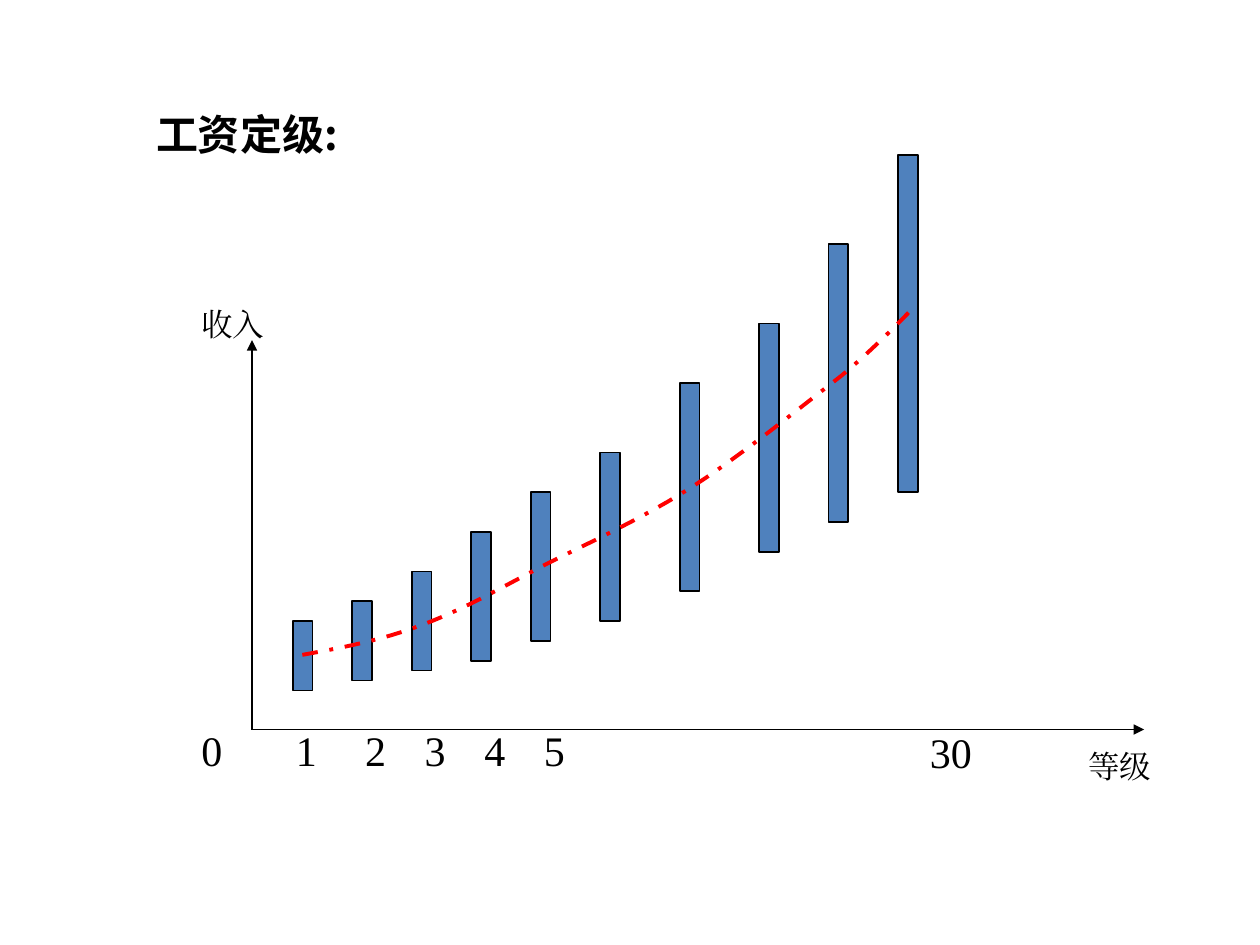
import pptx
import pptx.dml.color
import pptx.enum.dml
import pptx.enum.shapes
import pptx.enum.text
import pptx.oxml.ns
import pptx.util
from lxml import etree

Pt = pptx.util.Pt
qn = pptx.oxml.ns.qn
UNIT = 5.67
BARS = [(29.5, 62.6, 7), (35.5, 60.6, 8), (41.5, 57.6, 10), (47.5, 53.6, 13),
        (53.5, 49.6, 15), (60.5, 45.6, 17), (68.5, 38.6, 21), (76.5, 32.6, 23),
        (83.5, 24.6, 28), (90.5, 15.6, 34)]
TREND = [(172.8, 374.2), (195.8, 370.1), (218.2, 365.8), (241.2, 357.1),
         (264.2, 348.5), (284.4, 337), (310.3, 323.3), (336.2, 310.3),
         (367.9, 295.9), (396, 277.9), (424.1, 259.9), (459.4, 231.1),
         (481, 214.6), (501.8, 197.3), (522.7, 175), (522.7, 175)]


def tint(hue):
    """Turn a hex string into a colour."""
    return pptx.dml.color.RGBColor.from_string(hue)


def stroke(line, hue, width):
    """Set the colour and width of a line."""
    line.color.rgb = tint(hue)
    line.width = Pt(width)


def add_axis(slide, start, end, tip):
    """Draw an axis with an arrowhead at its head or tail end."""
    axis = slide.shapes.add_connector(
        pptx.enum.shapes.MSO_CONNECTOR.STRAIGHT, *map(Pt, start + end))
    stroke(axis.line, "000000", 0.75)
    etree.SubElement(axis.line._get_or_add_ln(), qn(f"a:{tip}End"), type="triangle")
    etree.SubElement(axis._element.spPr, qn("a:effectLst"))


def add_label(slide, text, left, top, width, height, size=24,
              font="Times New Roman", bold=False, anchor="TOP"):
    """Place a one-line text box."""
    frame = slide.shapes.add_textbox(*map(Pt, (left, top, width, height))).text_frame
    frame.word_wrap = True
    frame.vertical_anchor = getattr(pptx.enum.text.MSO_ANCHOR, anchor)
    run = frame.paragraphs[0].add_run()
    run.text = text
    run.font.name = font
    run.font.size = Pt(size)
    run.font.bold = bold
    run.font.color.rgb = tint("000000")
    etree.SubElement(run.font._element, qn("a:ea"), typeface=font)


def add_bar(slide, left, top, height):
    """Draw one pay range, measured in grid units."""
    bar = slide.shapes.add_shape(
        pptx.enum.shapes.MSO_SHAPE.RECTANGLE,
        *(Pt(UNIT * part) for part in (left, top, 2, height)))
    bar.shadow.inherit = False
    bar.fill.solid()
    bar.fill.fore_color.rgb = tint("4F81BD")
    stroke(bar.line, "000000", 1)


def bend(knots, steps=12):
    """List points along a chain of cubic curves."""
    points = [knots[0]]
    for first in range(0, len(knots) - 3, 3):
        for step in range(1, steps + 1):
            t = step / steps
            parts = ((1 - t) ** 3, 3 * t * (1 - t) ** 2, 3 * t * t * (1 - t), t ** 3)
            curve = knots[first:first + 4]
            points.append(tuple(
                sum(part * knot[axis] for part, knot in zip(parts, curve))
                for axis in (0, 1)))
    return points


def add_trend(slide, knots):
    """Draw the dashed trend curve through the bars."""
    points = [(Pt(x), Pt(y)) for x, y in bend(knots)]
    pen = slide.shapes.build_freeform(*points[0])
    pen.add_line_segments(points[1:], close=False)
    trend = pen.convert_to_shape()
    trend.shadow.inherit = False
    trend.fill.background()
    stroke(trend.line, "FF0000", 2.25)
    trend.line.dash_style = pptx.enum.dml.MSO_LINE.DASH_DOT


def main():
    """Build and save the pay grade slide."""
    deck = pptx.Presentation()
    deck.slide_width, deck.slide_height = Pt(720), Pt(540)
    slide = deck.slides.add_slide(deck.slide_layouts[6])
    add_axis(slide, (144, 194.4), (144, 416.9), "head")
    add_axis(slide, (144, 416.9), (653.8, 416.9), "tail")
    add_label(slide, "0", 108, 410.4, 23.8, 36)
    add_label(slide, "1", 162, 410.4, 41.8, 36)
    for grade in range(2, 6):
        add_label(slide, str(grade), 201.6 + 6 * UNIT * (grade - 2), 410.4, 41.8, 36)
    add_label(slide, "30", 524.2, 411.8, 41.8, 36)
    add_label(slide, "等级", 614.9, 423.4, 72, 28.8, 18)
    add_label(slide, "收入", 108, 170.6, 72, 28.8, 18)
    for bar in BARS:
        add_bar(slide, *bar)
    add_label(slide, "工资定级:", 82.1, 23.8, 218.2, 70.6,
              font="Noto Sans CJK SC", bold=True, anchor="BOTTOM")
    add_trend(slide, TREND)
    deck.save("out.pptx")


if __name__ == "__main__":
    main()
